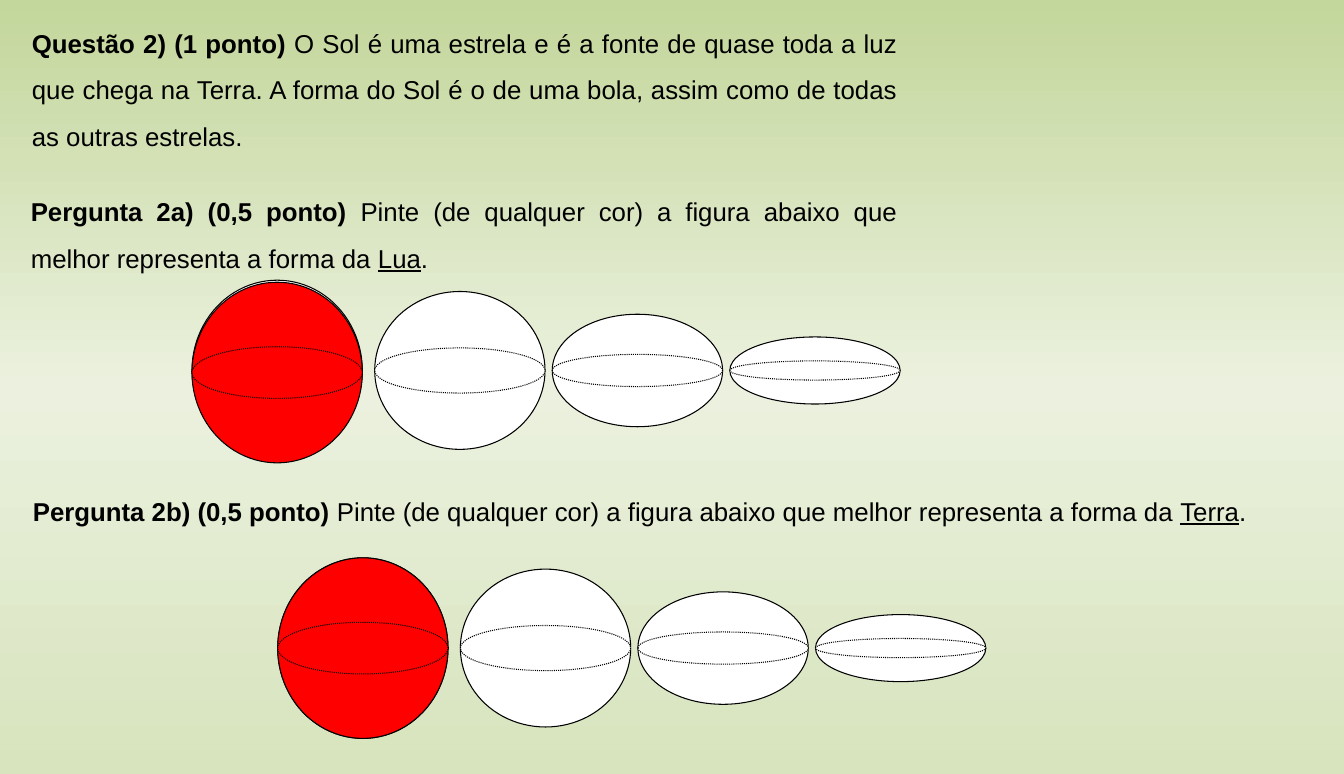
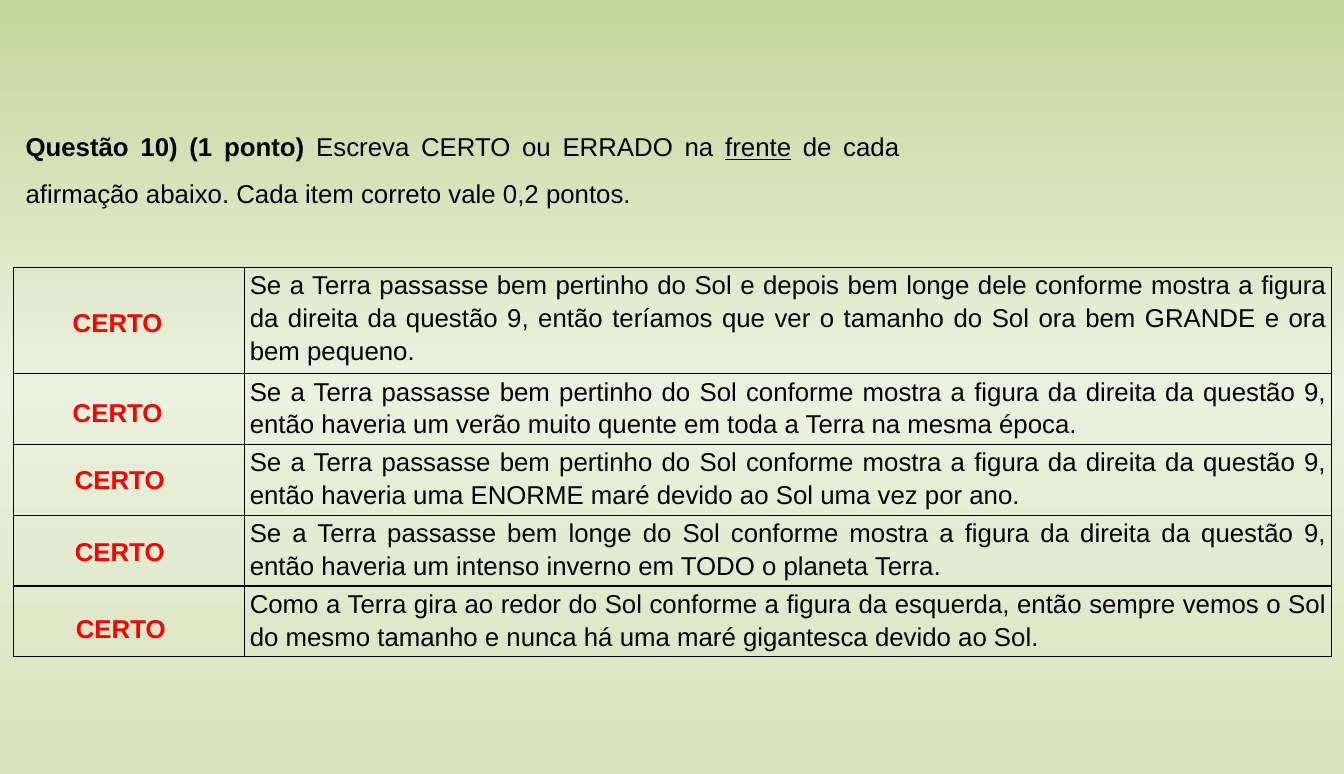
from lxml import etree
from pptx import Presentation
from pptx import util as u
from pptx.dml.color import RGBColor
from pptx.enum import dml, shapes, text
from pptx.oxml.ns import qn

WIDTH, HEIGHT = 13.02, 7.5
FONT, SIZE = "Arial", 18
BLACK, WHITE, RED = "000000", "FFFFFF", "FF0000"
BACKGROUND = [(0, "C3D69B"), (50, "EBF1DE"), (100, "D7E4BD")]
JUSTIFY, CENTER, LEFT = text.PP_ALIGN.JUSTIFY, text.PP_ALIGN.CENTER, text.PP_ALIGN.LEFT

# Each question: (left, top, width, height), alignment, runs of (text, style)
SPHERE_QUESTIONS = [
    ((0.21, 0.07, 8.58, 1.46), JUSTIFY, [
        ("Questão 2) (1 ponto)", "bold"),
        (" O Sol é uma estrela e é a fonte de quase toda a luz que chega na Terra. "
         "A forma do Sol é o de uma bola, assim como de todas as outras estrelas.", "")]),
    ((0.2, 1.7, 8.59, 1.01), JUSTIFY, [
        ("Pergunta 2a) (0,5 ponto) ", "bold"),
        ("Pinte (de qualquer cor) a figura abaixo que melhor representa a forma da ", ""),
        ("Lua", "underline"), (".", "")]),
    ((0.22, 4.6, 12.69, 0.56), LEFT, [
        ("Pergunta 2b) (0,5 ponto)", "bold"),
        (" Pinte (de qualquer cor) a figura abaixo que melhor representa a forma da ", ""),
        ("Terra", "underline"), (".", "")]),
]
TABLE_QUESTION = ((0.15, 1.07, 8.66, 1.01), JUSTIFY, [
    ("Questão 10) (1 ponto)", "bold"), (" Escreva CERTO ou ERRADO na ", ""),
    ("frente", "underline"),
    (" de cada afirmação abaixo. Cada item correto vale 0,2 pontos.", "")])

BALL_WIDTH, EQUATOR_SHARE = 1.65, 0.286
BALLS = [(0, 1.75), (1.77, 1.53), (3.49, 1.09), (5.21, 0.65)]  # offset, height
BALL_ROWS = [(1.86, 3.59), (2.69, 6.28)]  # left, centre line
PAINTED_DROP = 0.02

TABLE_LEFT, TABLE_TOP = 0.13, 2.59
COLUMNS = [2.24, 10.53]
ROW_HEIGHTS = [1.03, 0.68, 0.69, 0.68, 0.68]
STATEMENTS = [
    "Se a Terra passasse bem pertinho do Sol e depois bem longe dele conforme mostra a figura "
    "da direita da questão 9, então teríamos que ver o tamanho do Sol ora bem GRANDE e ora "
    "bem pequeno.",
    "Se a Terra passasse bem pertinho do Sol conforme mostra a figura da direita da questão 9, "
    "então haveria um verão muito quente em toda a Terra na mesma época.",
    "Se a Terra passasse bem pertinho do Sol conforme mostra a figura da direita da questão 9, "
    "então haveria uma ENORME maré devido ao Sol uma vez por ano.",
    "Se a Terra passasse bem longe do Sol conforme mostra a figura da direita da questão 9, "
    "então haveria um intenso inverno em TODO o planeta Terra.",
    "Como a Terra gira ao redor do Sol conforme a figura da esquerda, então sempre vemos o Sol "
    "do mesmo tamanho e nunca há uma maré gigantesca devido ao Sol.",
]
ANSWER = "CERTO"
ANSWER_SPOTS = [(0.6, 2.88), (0.6, 3.75), (0.62, 4.4), (0.62, 5.1), (0.63, 5.85)]


def color(value):
    return RGBColor.from_string(value)


def inches(*values):
    return [u.Inches(value) for value in values]


def paint_background(master):
    fill = master.background.fill
    fill.gradient()
    fill.gradient_angle = 270
    stops = master.element.find(".//" + qn("p:bgPr")).find(".//" + qn("a:gsLst"))
    for stop in list(stops):
        stops.remove(stop)
    for position, value in BACKGROUND:
        stop = etree.SubElement(stops, qn("a:gs"), pos=str(position * 1000))
        etree.SubElement(stop, qn("a:srgbClr"), val=value)


def write(para, runs, align, spacing, ink=BLACK):
    para.alignment, para.line_spacing = align, spacing
    for words, style in runs:
        span = para.add_run()
        span.text = words
        font = span.font
        font.name, font.size, font.color.rgb = FONT, u.Pt(SIZE), color(ink)
        font.bold = style == "bold"
        font.underline = style == "underline"


def add_text(page, area, align, runs, spacing=1.5, ink=BLACK, wrap=True):
    frame = page.shapes.add_textbox(*inches(*area)).text_frame
    frame.word_wrap = wrap
    frame.auto_size = text.MSO_AUTO_SIZE.SHAPE_TO_FIT_TEXT
    write(frame.paragraphs[0], runs, align, spacing, ink)


def add_ball(page, left, middle, height, fill):
    """Draw an ellipse with a dotted equator across its middle."""
    for tall, dash in ((height, None), (height * EQUATOR_SHARE, dml.MSO_LINE.ROUND_DOT)):
        oval = page.shapes.add_shape(
            shapes.MSO_SHAPE.OVAL, *inches(left, middle - tall / 2, BALL_WIDTH, tall))
        oval.shadow.inherit = False
        oval.fill.solid()
        oval.fill.fore_color.rgb = color(fill)
        oval.line.color.rgb, oval.line.width = color(BLACK), u.Pt(0.75)
        oval.line.dash_style = dash


def style_cell(cell):
    cell.margin_left = cell.margin_right = u.Inches(0.05)
    cell.margin_top = cell.margin_bottom = 0
    properties = cell._tc.get_or_add_tcPr()
    for side in ("lnL", "lnR", "lnT", "lnB"):
        border = etree.SubElement(properties, qn("a:" + side), w=str(u.Pt(1)))
        fill = etree.SubElement(border, qn("a:solidFill"))
        etree.SubElement(fill, qn("a:srgbClr"), val=BLACK)
    cell.fill.background()


def build_spheres(page):
    for question in SPHERE_QUESTIONS:
        add_text(page, *question)
    for left, middle in BALL_ROWS:
        for offset, height in BALLS:
            add_ball(page, left + offset, middle, height, WHITE)
    # The rounder ball of the first row is painted slightly below its outline
    for (left, middle), drop in zip(BALL_ROWS, (PAINTED_DROP, 0)):
        add_ball(page, left, middle + drop, BALLS[0][1], RED)


def build_statements(page):
    add_text(page, *TABLE_QUESTION)
    table = page.shapes.add_table(
        len(STATEMENTS), len(COLUMNS),
        *inches(TABLE_LEFT, TABLE_TOP, sum(COLUMNS), sum(ROW_HEIGHTS))).table
    table.first_row = table.horz_banding = False
    for column, width in zip(table.columns, COLUMNS):
        column.width = u.Inches(width)
    for row, height, statement in zip(table.rows, ROW_HEIGHTS, STATEMENTS):
        row.height = u.Inches(height)
        for cell in row.cells:
            style_cell(cell)
        write(row.cells[1].text_frame.paragraphs[0], [(statement, "")], JUSTIFY, 1.14)
    for left, top in ANSWER_SPOTS:
        add_text(page, (left, top, 1.08, 0.42), CENTER, [(ANSWER, "bold")],
                 spacing=1.14, ink=RED, wrap=False)


def main():
    deck = Presentation()
    deck.slide_width, deck.slide_height = inches(WIDTH, HEIGHT)
    paint_background(deck.slide_master)
    for build in (build_spheres, build_statements):
        build(deck.slides.add_slide(deck.slide_layouts[6]))
    deck.save("out.pptx")


if __name__ == "__main__":
    main()
